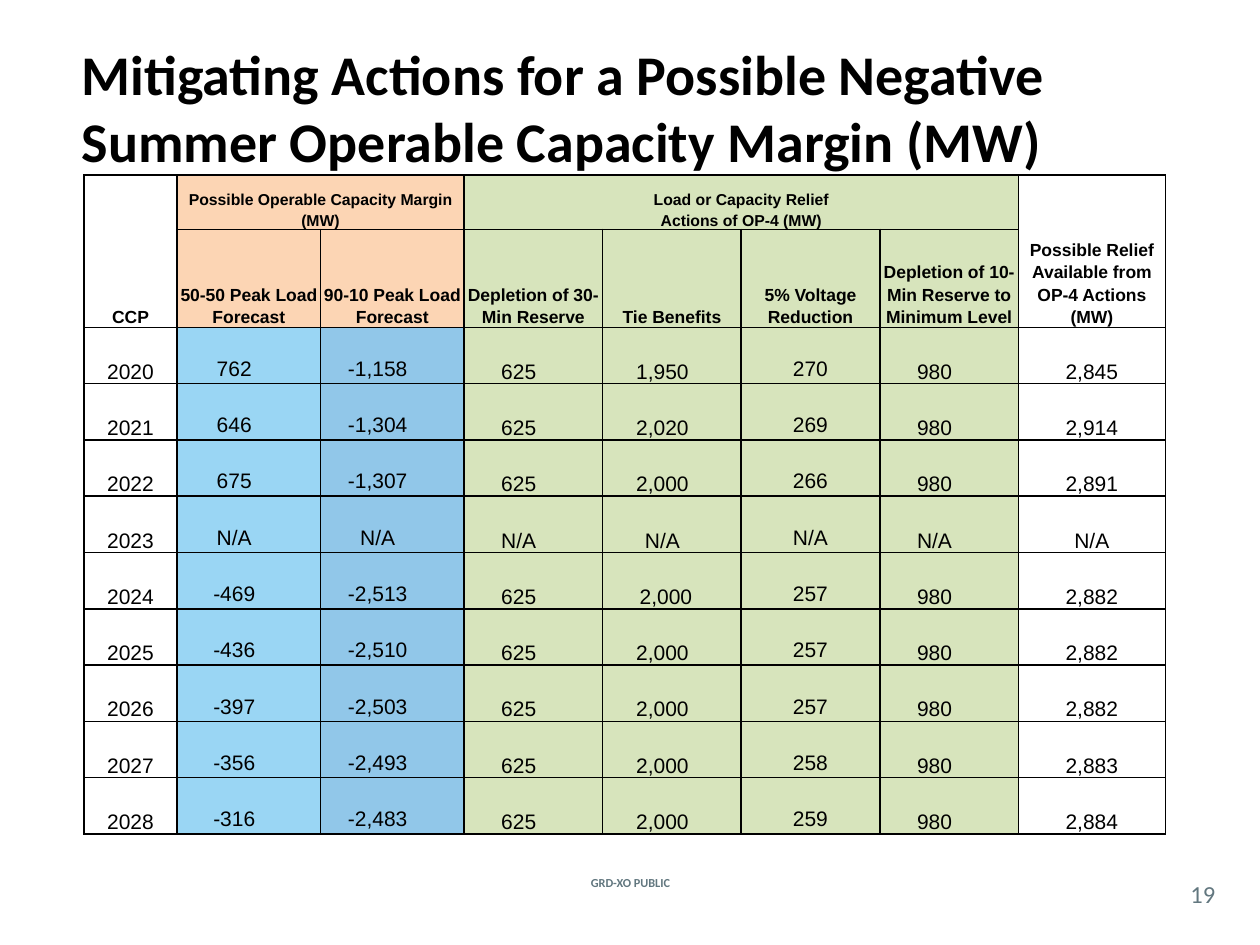
from lxml import etree
from pptx import Presentation
from pptx.dml.color import RGBColor
from pptx.enum.text import MSO_ANCHOR, PP_ALIGN
from pptx.oxml.ns import qn
from pptx.util import Pt

LEFT, CENTER = PP_ALIGN.LEFT, PP_ALIGN.CENTER
TOP, MIDDLE, BOTTOM = MSO_ANCHOR.TOP, MSO_ANCHOR.MIDDLE, MSO_ANCHOR.BOTTOM
BLACK, GRAY = "000000", "62777F"
ORANGE, GREEN, SKY, BLUE = "FCD5B4", "D7E4BC", "9AD6F4", "91C7E9"

TITLE = "Mitigating Actions for a Possible Negative Summer Operable Capacity Margin (MW)"
FOOTER = "GRD-XO PUBLIC"
GROUPS = [
    (1, 2, ["Possible Operable Capacity Margin (MW)"], ORANGE),
    (3, 6, ["Load or Capacity Relief", "Actions of OP-4 (MW)"], GREEN),
]
HEADERS = [
    ["CCP"],
    ["50-50 Peak Load Forecast"],
    ["90-10 Peak Load Forecast"],
    ["Depletion of 30-Min Reserve"],
    ["Tie Benefits"],
    ["5% Voltage Reduction"],
    ["Depletion of 10-Min Reserve to Minimum Level"],
    ["Possible Relief Available from", "OP-4 Actions (MW)"],
]
ROWS = [
    ("2020", "762", "-1,158", "625", "1,950", "270", "980", "2,845"),
    ("2021", "646", "-1,304", "625", "2,020", "269", "980", "2,914"),
    ("2022", "675", "-1,307", "625", "2,000", "266", "980", "2,891"),
    ("2023", "N/A", "N/A", "N/A", "N/A", "N/A", "N/A", "N/A"),
    ("2024", "-469", "-2,513", "625", "2,000", "257", "980", "2,882"),
    ("2025", "-436", "-2,510", "625", "2,000", "257", "980", "2,882"),
    ("2026", "-397", "-2,503", "625", "2,000", "257", "980", "2,882"),
    ("2027", "-356", "-2,493", "625", "2,000", "258", "980", "2,883"),
    ("2028", "-316", "-2,483", "625", "2,000", "259", "980", "2,884"),
]
COL_WIDTHS = [53.2, 82, 82, 79.2, 79.2, 79.2, 79.2, 84]
ROW_HEIGHTS = [31, 51.7] + [32.2] * len(ROWS)
HEADER_FILLS = [None, ORANGE, ORANGE, GREEN, GREEN, GREEN, GREEN, None]
BODY_FILLS = [None, SKY, BLUE, GREEN, GREEN, GREEN, GREEN, None]
RIGHT_INSETS = [0.7, 17.3, 17.3, 17.3, 11.5, 0.7, 17.3, 0.7]
RAISED_COLS = (1, 2, 5)
OUTER_COLS = (0, len(COL_WIDTHS) - 1)


def rgb(color):
    return RGBColor.from_string(color)


def write(tf, lines, size, font="Arial", color=BLACK, bold=False, align=CENTER, spacing=None):
    for i, line in enumerate(lines):
        p = tf.paragraphs[0] if i == 0 else tf.add_paragraph()
        p.alignment = align
        if spacing:
            p.line_spacing = spacing
        r = p.add_run()
        r.text = line
        r.font.name, r.font.size, r.font.bold = font, Pt(size), bold
        r.font.color.rgb = rgb(color)


def add_text(s, box, text, anchor=TOP, **fmt):
    tf = s.shapes.add_textbox(*map(Pt, box)).text_frame
    tf.word_wrap = True
    tf.vertical_anchor = anchor
    write(tf, [text], font="Calibri", **fmt)


def style_cell(cell, fill=None, right=0.7, bottom=0):
    cell.vertical_anchor = BOTTOM
    cell.margin_left, cell.margin_top = Pt(0.7), Pt(0.7)
    cell.margin_right, cell.margin_bottom = Pt(right), Pt(bottom)
    tcPr = cell._tc.get_or_add_tcPr()
    for side in "LRTB":
        ln = etree.SubElement(tcPr, qn(f"a:ln{side}"), w=str(Pt(1)))
        solid = etree.SubElement(ln, qn("a:solidFill"))
        etree.SubElement(solid, qn("a:srgbClr"), val=BLACK)
    if fill:
        cell.fill.solid()
        cell.fill.fore_color.rgb = rgb(fill)
    else:
        cell.fill.background()


def add_capacity_table(s):
    frame = s.shapes.add_table(len(ROW_HEIGHTS), len(COL_WIDTHS), Pt(48), Pt(100.1),
                               Pt(sum(COL_WIDTHS)), Pt(sum(ROW_HEIGHTS)))
    table = frame.table
    table.first_row = table.horz_banding = False
    for col, width in zip(table.columns, COL_WIDTHS):
        col.width = Pt(width)
    for row, height in zip(table.rows, ROW_HEIGHTS):
        row.height = Pt(height)

    for c, (lines, fill) in enumerate(zip(HEADERS, HEADER_FILLS)):
        top, label = table.cell(0, c), table.cell(1, c)
        style_cell(top, fill)
        style_cell(label, fill)
        if c in OUTER_COLS:
            top.merge(label)
            label = top
        write(label.text_frame, lines, 10, bold=True, spacing=1.15)
    for first, last, lines, fill in GROUPS:
        table.cell(0, first).merge(table.cell(0, last))
        write(table.cell(0, first).text_frame, lines, 9, bold=True, spacing=1.15)

    for r, values in enumerate(ROWS, 2):
        for c, value in enumerate(values):
            cell = table.cell(r, c)
            style_cell(cell, BODY_FILLS[c], RIGHT_INSETS[c], 1.7 if c in RAISED_COLS else 0)
            write(cell.text_frame, [value], 12, spacing=1.15)
    table.cell(6, 4).margin_right = Pt(7.5)


prs = Presentation()
prs.slide_width, prs.slide_height = Pt(720), Pt(540)
s = prs.slides.add_slide(prs.slide_layouts[6])
add_text(s, (307.4, 498.2, 105.8, 12.2), FOOTER, MIDDLE, size=7, color=GRAY, bold=True)
add_text(s, (39.6, 15.8, 648, 90), TITLE, MIDDLE, size=32, bold=True, align=LEFT)
add_text(s, (673.2, 499, 31, 23), "19", size=14, color=GRAY, align=LEFT)
add_capacity_table(s)
prs.save("out.pptx")
